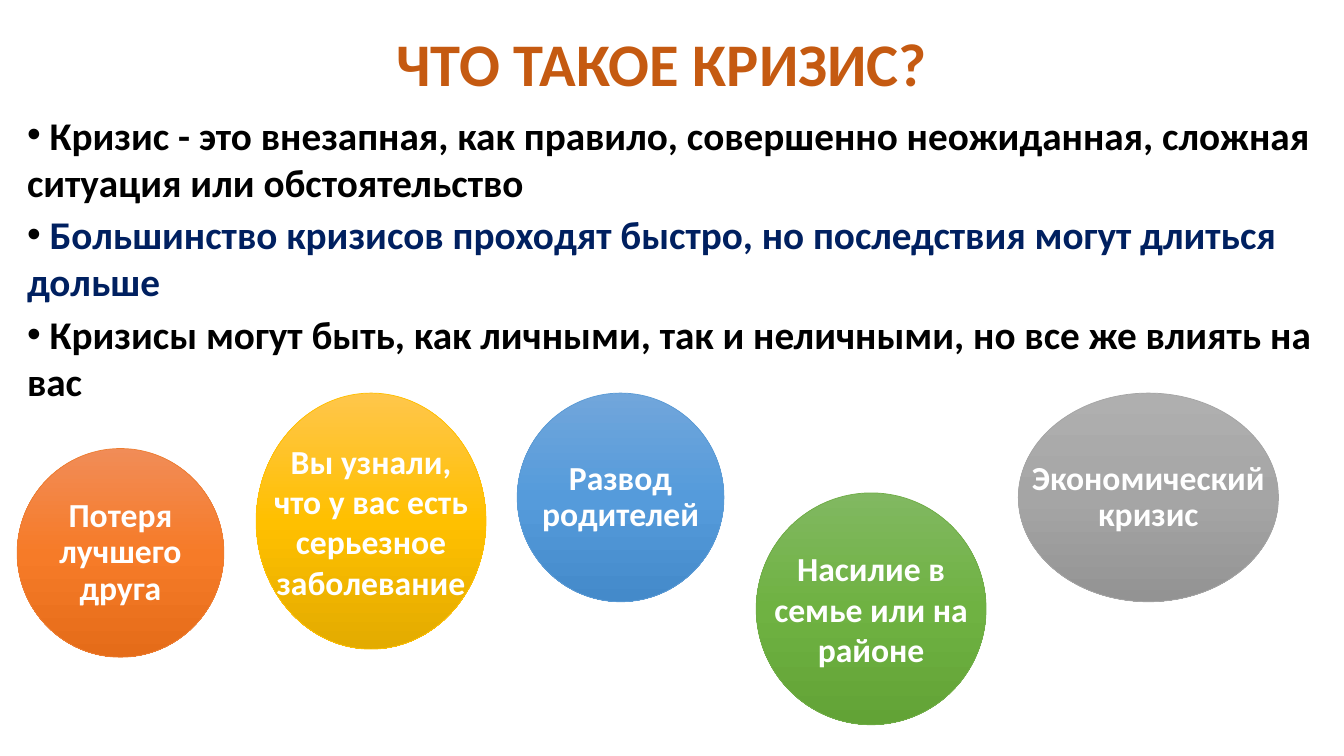
from copy import deepcopy

from lxml import etree
from pptx import Presentation
from pptx.dml import color
from pptx.enum import shapes, text
from pptx.oxml import ns
from pptx.util import Inches, Pt

# Content
FONT = "Calibri"
TITLE = "ЧТО ТАКОЕ КРИЗИС?"
BLACK, NAVY, WHITE, RUST = "000000", "002060", "FFFFFF", "C55A11"
POINTS = [
    ("Кризис - это внезапная, как правило, совершенно неожиданная, сложная ситуация или обстоятельство", BLACK),
    ("Большинство кризисов проходят быстро, но последствия могут длиться дольше", NAVY),
    ("Кризисы могут быть, как личными, так и неличными, но все же влиять на вас", BLACK),
]
# lines, (left, top, width, height), gradient from top to bottom, outline, line spacing
EXAMPLES = [
    (["Потеря", "лучшего", "друга"], (0.17, 4.45, 2.05, 2.07),
     ("F18C57", "F67B28", "E56C19"), "ED7D31", 0.9),
    (["Развод", "родителей"], (5.13, 3.9, 2.05, 2.07),
     ("71A6DB", "559BDB", "448ACA"), "5B9BD5", 0.9),
    (["Вы узнали,", "что у вас есть", "серьезное", "заболевание"], (2.54, 3.9, 2.28, 2.54),
     ("FFC64B", "FFC000", "E3AB00"), "FFC000", 1.0),
    (["Насилие в", "семье или на", "районе"], (7.5, 4.89, 2.28, 2.3),
     ("81B861", "6FB242", "62A336"), "70AD47", 1.0),
    (["Экономический", "кризис"], (10.1, 3.9, 2.58, 2.07),
     ("AFAFAF", "A5A5A5", "939393"), "A5A5A5", 0.9),
]


def rgb(value):
    return color.RGBColor.from_string(value)


def style(paragraph, size, colour):
    font = paragraph.font
    font.name, font.size, font.bold = FONT, Pt(size), True
    font.color.rgb = rgb(colour)


def add_text_box(slide, box):
    frame = slide.shapes.add_textbox(*map(Inches, box)).text_frame
    frame.word_wrap = True
    return frame


def add_bullet(paragraph):
    properties = paragraph._p.get_or_add_pPr()
    properties.set("marL", "0")
    properties.set("indent", "0")
    font = etree.SubElement(properties, ns.qn("a:buFont"))
    font.set("typeface", "Arial")
    bullet = etree.SubElement(properties, ns.qn("a:buChar"))
    bullet.set("char", "•")


def fill_gradient(shape, colours):
    fill = shape.fill
    fill.gradient()
    fill.gradient_angle = 270
    stop_list = shape._element.spPr.find(ns.qn("a:gradFill")).find(ns.qn("a:gsLst"))
    stop_list.insert(1, deepcopy(stop_list[0]))
    for index, (stop, colour) in enumerate(zip(fill.gradient_stops, colours)):
        stop.position = index / 2
        stop.color.rgb = rgb(colour)


def add_circle(slide, lines, box, gradient, outline, spacing):
    circle = slide.shapes.add_shape(shapes.MSO_SHAPE.OVAL, *map(Inches, box))
    circle.shadow.inherit = False
    fill_gradient(circle, gradient)
    circle.line.color.rgb = rgb(outline)
    circle.line.width = Pt(0.5)
    frame = circle.text_frame
    frame.word_wrap = False
    frame.vertical_anchor = text.MSO_ANCHOR.MIDDLE
    paragraph = frame.paragraphs[0]
    paragraph.text = "\v".join(lines)
    paragraph.alignment = text.PP_ALIGN.CENTER
    paragraph.line_spacing = spacing
    style(paragraph, 24, WHITE)


def main():
    presentation = Presentation()
    presentation.slide_width = Inches(13.33)
    presentation.slide_height = Inches(7.5)
    slide = presentation.slides.add_slide(presentation.slide_layouts[6])

    # Title
    frame = add_text_box(slide, (1.74, 0.3, 9.65, 0.73))
    frame.vertical_anchor = text.MSO_ANCHOR.MIDDLE
    title = frame.paragraphs[0]
    title.text = TITLE
    title.alignment = text.PP_ALIGN.CENTER
    title.line_spacing = 0.9
    style(title, 43.2, RUST)

    # Bulleted points: the leading space keeps the bullet black
    frame = add_text_box(slide, (0.17, 1.05, 13.16, 3.05))
    for index, (point, colour) in enumerate(POINTS):
        paragraph = frame.add_paragraph() if index else frame.paragraphs[0]
        paragraph.space_before = paragraph.space_after = Pt(2)
        add_bullet(paragraph)
        for words, run_colour in ((" ", BLACK), (point, colour)):
            run = paragraph.add_run()
            run.text = words
            style(run, 28, run_colour)

    # Examples of crises
    for example in EXAMPLES:
        add_circle(slide, *example)

    presentation.save("out.pptx")


if __name__ == "__main__":
    main()
